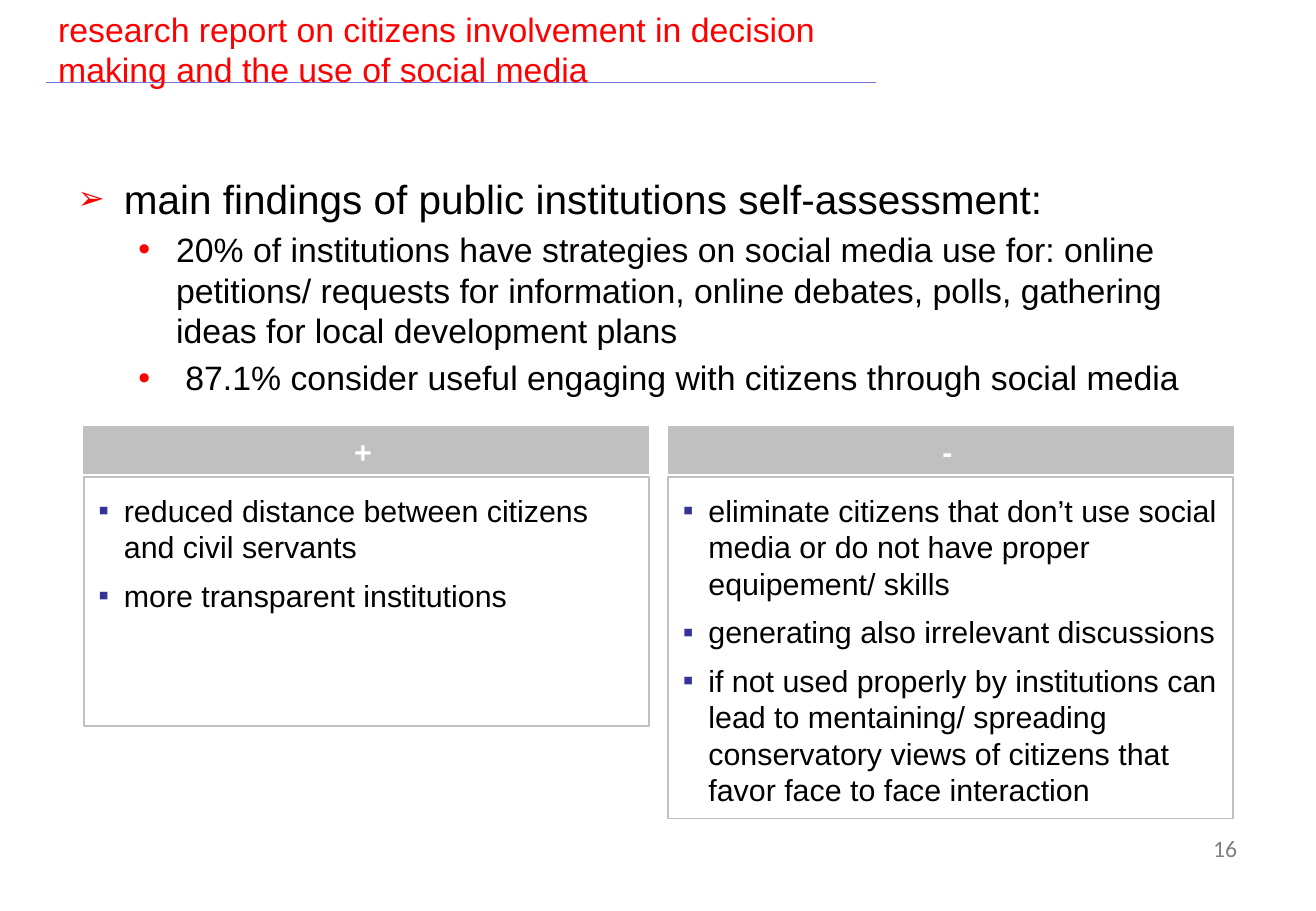
from dataclasses import dataclass
from typing import NamedTuple, Optional

from lxml import etree
from pptx import Presentation
from pptx import util as u
from pptx.dml.color import RGBColor
from pptx.enum import shapes, text
from pptx.oxml import ns

SLIDE_WIDTH, SLIDE_HEIGHT = u.Inches(10.83), u.Inches(7.5)


@dataclass(frozen=True)
class Theme:
    font: str = "Arial"
    number_font: str = "Calibri"
    ink: str = "000000"
    accent: str = "FF0000"
    rule: str = "7575D1"
    panel: str = "C0C0C0"
    panel_bullet: str = "333399"
    panel_title: str = "FFFFFF"
    number: str = "808080"
    heading_size: int = 24
    body_size: int = 20
    panel_size: int = 18
    number_size: int = 14


THEME = Theme()


# Lengths are percentages of the slide's width or height
def across(share: float) -> int:
    return round(SLIDE_WIDTH * share / 100)


def down(share: float) -> int:
    return round(SLIDE_HEIGHT * share / 100)


class Box(NamedTuple):
    left: float
    top: float
    width: float
    height: float

    def lengths(self) -> tuple[int, int, int, int]:
        return across(self.left), down(self.top), across(self.width), down(self.height)


class Bullet(NamedTuple):
    character: str
    color: str
    margin: float
    hanging: float
    percent: int = 100


class Finding(NamedTuple):
    words: str
    size: int
    level: int
    bullet: Bullet


class Panel(NamedTuple):
    sign: str
    left: float
    height: float
    points: list[str]


# Content
MAIN_BULLET = Bullet("➢", THEME.accent, 3.51, 3.51, 80)
SUB_BULLET = Bullet("•", THEME.accent, 7.48, 2.86)
PANEL_BULLET = Bullet("▪", THEME.panel_bullet, 1.94, 1.94)

TITLE = "research report on citizens involvement in decision making and the use of social media"
FINDINGS = [
    Finding("main findings of public institutions self-assessment:",
            THEME.heading_size, 0, MAIN_BULLET),
    Finding("20% of institutions have strategies on social media use for: online petitions/ "
            "requests for information, online debates, polls, gathering ideas for local "
            "development plans", THEME.body_size, 1, SUB_BULLET),
    Finding(" 87.1% consider useful engaging with citizens through social media",
            THEME.body_size, 1, SUB_BULLET),
]
PANELS = [
    Panel("+", 6.37, 27.33, [
        "reduced distance between citizens and civil servants",
        "more transparent institutions",
    ]),
    Panel("-", 50.78, 37.47, [
        "eliminate citizens that don’t use social media or do not have proper equipement/ skills",
        "generating also irrelevant discussions",
        "if not used properly by institutions can lead to mentaining/ spreading conservatory "
        "views of citizens that favor face to face interaction",
    ]),
]
PANEL_WIDTH = 42.94
HEADER_TOP, HEADER_HEIGHT = 46.8, 5.2
PANEL_TOP = 52.4


def add_bullet(paragraph, bullet: Bullet) -> None:
    properties = paragraph._p.get_or_add_pPr()
    properties.set("marL", str(across(bullet.margin)))
    properties.set("indent", str(-across(bullet.hanging)))
    color = etree.SubElement(properties, ns.qn("a:buClr"))
    etree.SubElement(color, ns.qn("a:srgbClr"), val=bullet.color)
    etree.SubElement(properties, ns.qn("a:buSzPct"), val=str(bullet.percent * 1000))
    etree.SubElement(properties, ns.qn("a:buFont"), typeface=THEME.font)
    etree.SubElement(properties, ns.qn("a:buChar"), char=bullet.character)


def write(frame, words: str, *, size: int, color: str = THEME.ink, font: str = THEME.font,
          bold: bool = False, align=text.PP_ALIGN.LEFT, level: int = 0,
          bullet: Optional[Bullet] = None, before: float = 0) -> None:
    """Fill the frame's empty first paragraph, or add one with space before it."""
    first = not frame.text
    paragraph = frame.paragraphs[0] if first else frame.add_paragraph()
    if bullet:
        add_bullet(paragraph, bullet)
    paragraph.level = level
    paragraph.alignment = align
    if not first:
        paragraph.space_before = u.Pt(before)
    run = paragraph.add_run()
    run.text = words
    run.font.name, run.font.size, run.font.bold = font, u.Pt(size), bold
    run.font.color.rgb = RGBColor.from_string(color)


def add_text_box(slide, box: Box, anchor=text.MSO_ANCHOR.TOP):
    frame = slide.shapes.add_textbox(*box.lengths()).text_frame
    frame.word_wrap = True
    frame.vertical_anchor = anchor
    return frame


def add_rectangle(slide, box: Box, *, line_width: float, anchor, insets: Box,
                  fill: Optional[str] = None):
    """Draw a rectangle; insets are left, top, right and bottom shares."""
    shape = slide.shapes.add_shape(shapes.MSO_SHAPE.RECTANGLE, *box.lengths())
    shape.shadow.inherit = False
    if fill:
        shape.fill.solid()
        shape.fill.fore_color.rgb = RGBColor.from_string(fill)
    else:
        shape.fill.background()
    shape.line.color.rgb = RGBColor.from_string(THEME.panel)
    shape.line.width = u.Pt(line_width)
    frame = shape.text_frame
    frame.word_wrap = True
    frame.vertical_anchor = anchor
    (frame.margin_left, frame.margin_top,
     frame.margin_right, frame.margin_bottom) = insets.lengths()
    return frame


def add_rule(slide, start: float, end: float, top: float) -> None:
    rule = slide.shapes.add_connector(shapes.MSO_CONNECTOR.STRAIGHT,
                                      across(start), down(top), across(end), down(top))
    rule.line.color.rgb = RGBColor.from_string(THEME.rule)
    rule.line.width = u.Pt(0.75)
    etree.SubElement(rule._element.spPr, ns.qn("a:effectLst"))


def add_panel(slide, panel: Panel) -> None:
    header = add_rectangle(slide, Box(panel.left, HEADER_TOP, PANEL_WIDTH, HEADER_HEIGHT),
                           line_width=0.75, anchor=text.MSO_ANCHOR.MIDDLE,
                           insets=Box(0, 0.2, 0.5, 0), fill=THEME.panel)
    write(header, panel.sign, size=THEME.panel_size, color=THEME.panel_title,
          bold=True, align=text.PP_ALIGN.CENTER)
    body = add_rectangle(slide, Box(panel.left, PANEL_TOP, PANEL_WIDTH, panel.height),
                         line_width=1, anchor=text.MSO_ANCHOR.TOP,
                         insets=Box(1.11, 1.6, 0.74, 1.07))
    for point in panel.points:
        write(body, point, size=THEME.panel_size, bullet=PANEL_BULLET,
              before=0.4 * THEME.panel_size)


def main() -> None:
    presentation = Presentation()
    presentation.slide_width, presentation.slide_height = SLIDE_WIDTH, SLIDE_HEIGHT
    slide = presentation.slides.add_slide(presentation.slide_layouts[6])

    # Title and its rule
    add_rule(slide, 66.57, 3.51, 9.07)
    title = add_text_box(slide, Box(3.51, 1.73, 62.97, 7.33), text.MSO_ANCHOR.MIDDLE)
    write(title, TITLE, size=THEME.body_size, color=THEME.accent)

    # Findings
    findings = add_text_box(slide, Box(4.99, 18.4, 90.03, 28.53))
    for finding in FINDINGS:
        write(findings, finding.words, size=finding.size, level=finding.level,
              bullet=finding.bullet, before=0.2 * finding.size)

    # Advantages and drawbacks
    for panel in PANELS:
        add_panel(slide, panel)

    # Slide number
    number = add_text_box(slide, Box(87.81, 90.93, 7.11, 7.33))
    write(number, "16", size=THEME.number_size, color=THEME.number,
          font=THEME.number_font, align=text.PP_ALIGN.RIGHT)

    presentation.save("out.pptx")


if __name__ == "__main__":
    main()
